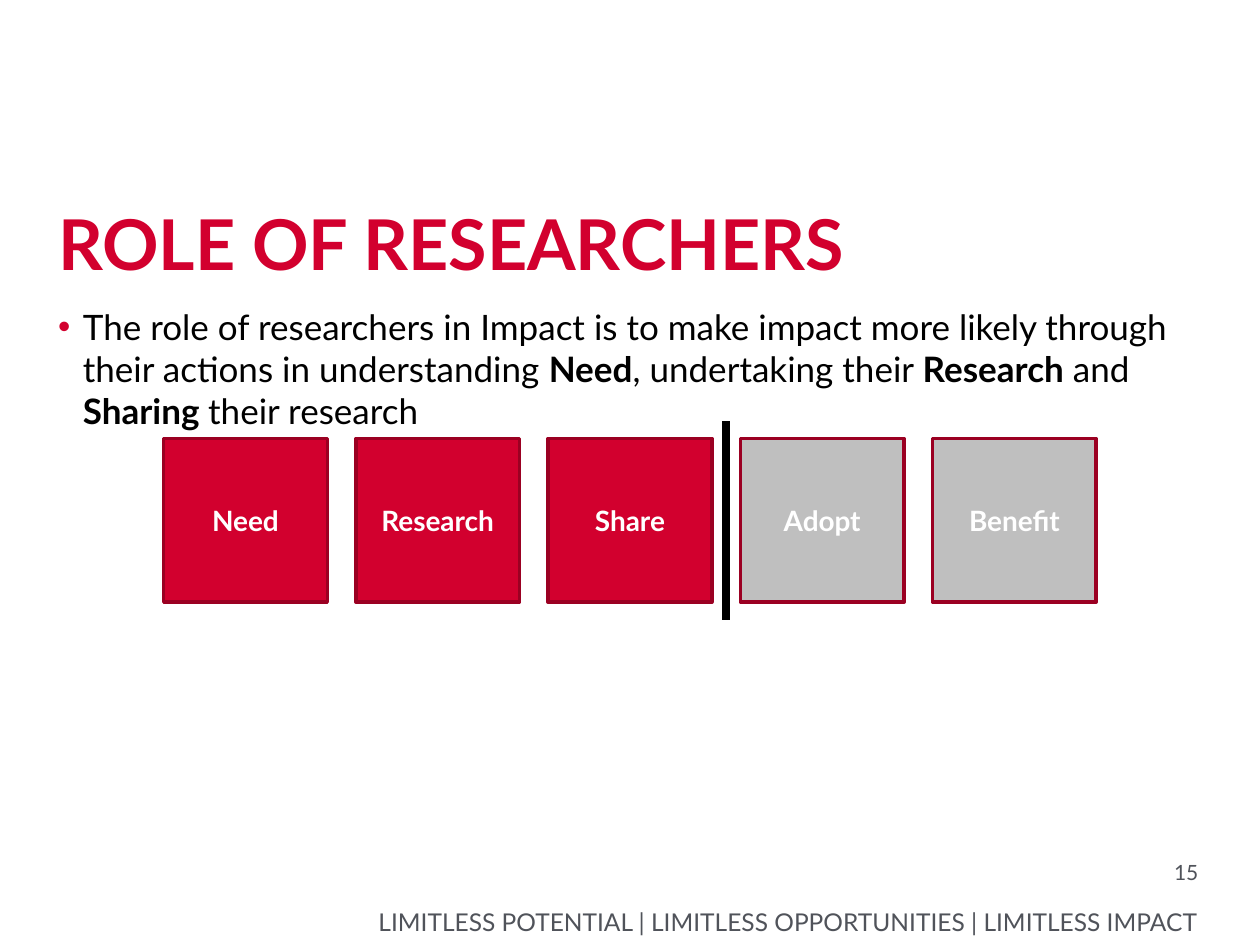
from lxml import etree
from pptx import Presentation
from pptx.dml.color import RGBColor
from pptx.enum.shapes import MSO_CONNECTOR, MSO_SHAPE
from pptx.enum.text import MSO_ANCHOR, MSO_AUTO_SIZE, PP_ALIGN
from pptx.oxml.ns import qn
from pptx.util import Cm, Pt

RECTANGLE = MSO_SHAPE.RECTANGLE
STRAIGHT = MSO_CONNECTOR.STRAIGHT
TOP, MIDDLE, BOTTOM = MSO_ANCHOR.TOP, MSO_ANCHOR.MIDDLE, MSO_ANCHOR.BOTTOM
LEFT, CENTER, RIGHT = PP_ALIGN.LEFT, PP_ALIGN.CENTER, PP_ALIGN.RIGHT

FONT = "Lato"
RED = RGBColor(0xD2, 0x00, 0x2E)
DARK_RED = RGBColor(0x9B, 0x00, 0x22)
LIGHT_GREY = RGBColor(0xBF, 0xBF, 0xBF)
DARK_GREY = RGBColor(0x50, 0x53, 0x5A)
BLACK = RGBColor(0x00, 0x00, 0x00)
WHITE = RGBColor(0xFF, 0xFF, 0xFF)

STAGES = [
    ("Need", RED),
    ("Research", RED),
    ("Share", RED),
    ("Adopt", LIGHT_GREY),
    ("Benefit", LIGHT_GREY),
]
RESEARCHER_STAGES = 3
ROLE = [
    ("The role of researchers in Impact is to make impact more likely through "
     "their actions in understanding ", False),
    ("Need", True),
    (", undertaking their ", False),
    ("Research", True),
    (" and ", False),
    ("Sharing ", True),
    ("their research", False),
]


def place(shape, box):
    shape.left, shape.top, shape.width, shape.height = map(Cm, box)


def write(shape, runs, size, color, bold=False, align=LEFT, anchor=TOP,
          margin=0, wrap=True):
    frame = shape.text_frame
    frame.auto_size = MSO_AUTO_SIZE.NONE
    frame.word_wrap = wrap
    frame.vertical_anchor = anchor
    frame.margin_left = frame.margin_right = Cm(margin)
    frame.margin_top = frame.margin_bottom = Cm(margin / 2)
    paragraph = frame.paragraphs[0]
    paragraph.alignment = align
    paragraph.space_before = Pt(0)
    if isinstance(runs, str):
        runs = [(runs, bold)]
    for text, is_bold in runs:
        run = paragraph.add_run()
        run.text = text
        run.font.name = FONT
        run.font.size = Pt(size)
        run.font.bold = is_bold
        run.font.color.rgb = color
    return paragraph


def add_bullet(paragraph, color, indent):
    properties = paragraph._p.get_or_add_pPr()
    properties.set("marL", str(Cm(indent)))
    properties.set("indent", str(-Cm(indent)))
    bullet_color = etree.SubElement(properties, qn("a:buClr"))
    etree.SubElement(bullet_color, qn("a:srgbClr"), val=str(color))
    etree.SubElement(properties, qn("a:buFont"), typeface="Arial")
    etree.SubElement(properties, qn("a:buChar"), char="•")


def add_heading(slide, box):
    title = slide.shapes.title
    place(title, box)
    write(title, "ROLE OF RESEARCHERS", 40, RED, bold=True, anchor=BOTTOM,
          wrap=False)


def add_role(slide, box):
    body = slide.placeholders[1]
    place(body, box)
    add_bullet(write(body, ROLE, 20, BLACK), RED, 0.5)


def add_stages(slide, box, overhang):
    left, top, width, side = box
    pitch = (width - side) / (len(STAGES) - 1)
    for index, (name, color) in enumerate(STAGES):
        square = slide.shapes.add_shape(RECTANGLE, 0, 0, 0, 0)
        place(square, (left + index * pitch, top, side, side))
        square.shadow.inherit = False
        square.fill.solid()
        square.fill.fore_color.rgb = color
        square.line.color.rgb = DARK_RED
        square.line.width = Pt(2)
        write(square, name, 16, WHITE, bold=True, align=CENTER, anchor=MIDDLE,
              margin=0.25)

    gap = pitch - side
    x = Cm(left + RESEARCHER_STAGES * pitch - gap / 2)
    divider = slide.shapes.add_connector(
        STRAIGHT, x, Cm(top - overhang), x, Cm(top + side + overhang))
    divider.line.color.rgb = BLACK
    divider.line.width = Pt(5)
    etree.SubElement(divider._element.spPr, qn("a:effectLst"))


def add_footer(slide, box):
    left, top, width, height = box
    number = slide.shapes.add_textbox(0, 0, 0, 0)
    place(number, (left + width - 1.9, top, 1.9, 0.7))
    write(number, "15", 12, DARK_GREY, align=RIGHT)
    tagline = slide.shapes.add_textbox(0, 0, 0, 0)
    place(tagline, (left, top + height - 0.6, width, 0.6))
    write(tagline,
          "LIMITLESS POTENTIAL\u2002|\u2002LIMITLESS OPPORTUNITIES\u2002|\u2002LIMITLESS IMPACT".replace("\u2002", " "),
          14, DARK_GREY, align=RIGHT, anchor=BOTTOM)


def main():
    presentation = Presentation()
    presentation.slide_width = Cm(25.4)
    presentation.slide_height = Cm(19.05)
    slide = presentation.slides.add_slide(presentation.slide_layouts[1])
    add_heading(slide, (1.17, 3.43, 23, 2.31))
    add_role(slide, (1.17, 6.15, 23, 11))
    add_stages(slide, (3.3, 8.84, 18.8, 3.3), 0.35)
    add_footer(slide, (5.36, 17.32, 18.8, 1.55))
    presentation.save("out.pptx")


if __name__ == "__main__":
    main()
